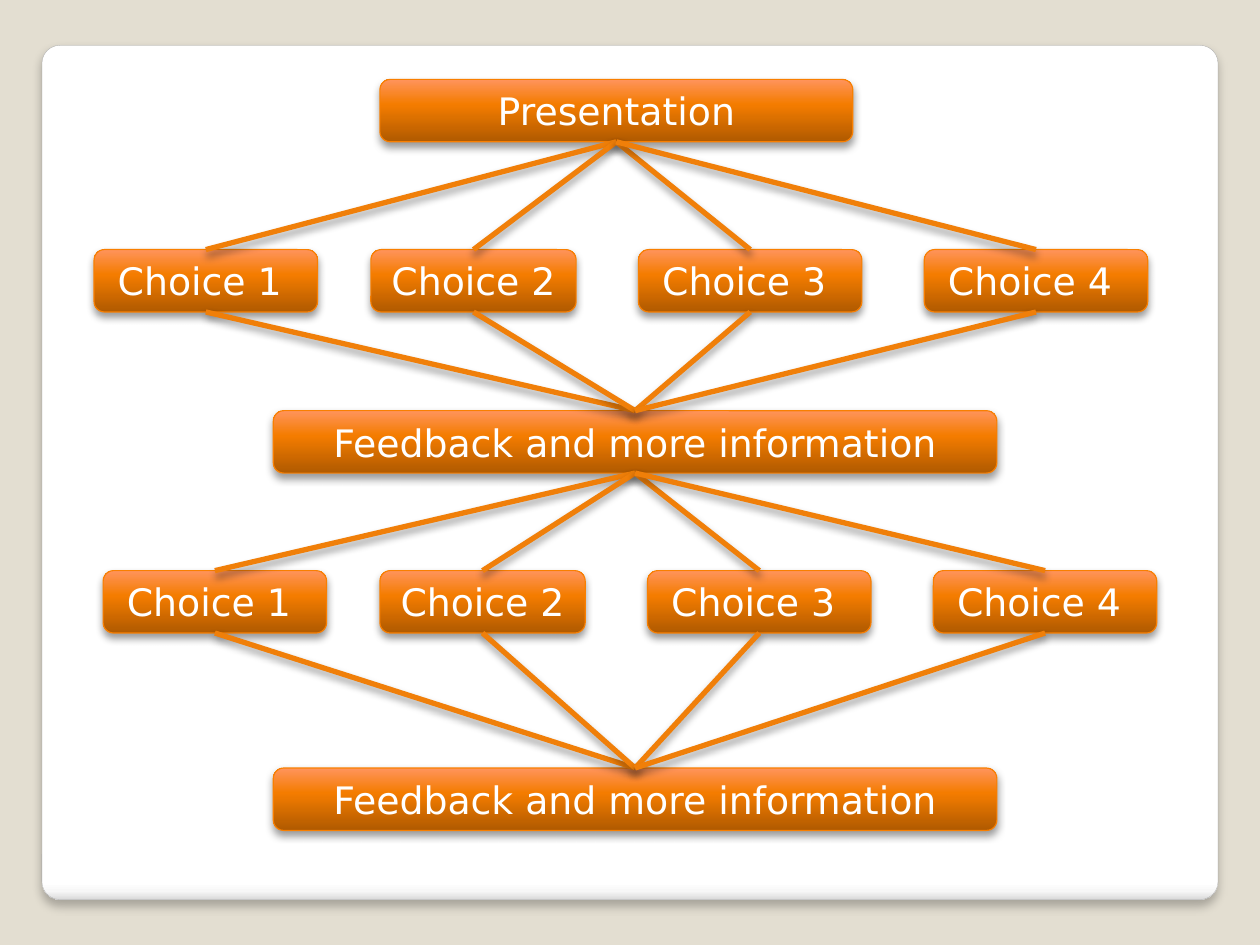
from lxml import etree
from pptx import Presentation
from pptx import util as u
from pptx.dml.color import RGBColor
from pptx.enum import shapes, text
from pptx.oxml.ns import qn

# Content: rows of boxes from top to bottom, each box as (label, left, width)
FEEDBACK = [("Feedback and more information", 2.41, 6.38)]
CHOICES = [("Choice 1 ", 0.83, 1.97), ("Choice 2", 3.27, 1.81),
           ("Choice 3 ", 5.63, 1.97), ("Choice 4 ", 8.15, 1.97)]
SECOND_ROW_SHIFT = 0.08
ROWS = [
    (0.7, [("Presentation", 3.35, 4.17)]),
    (2.2, CHOICES),
    (3.62, FEEDBACK),
    (5.03, [(label, left + SECOND_ROW_SHIFT, width) for label, left, width in CHOICES]),
    (6.77, FEEDBACK),
]
BOX_HEIGHT = 0.55

# Style: gradient stops as (percent, colour), shadows as (opacity, blur, distance)
FONT = "DejaVu Sans"
PANEL_STOPS = [(0, "FFFFFF"), (98, "FFFFFF"), (99, "F7F7F7"), (100, "DADADA")]
BOX_STOPS = [(0, "B05A00"), (60, "F47C00"), (100, "FF945C")]
PANEL_SHADOW = (25, 6, 4)
BOX_SHADOW = (40, 5.2, 3)
TOP, BOTTOM = 0, 2


def color(value):
    return RGBColor.from_string(value)


def add_color(parent, value):
    return etree.SubElement(parent, qn("a:srgbClr"), val=value)


def set_line(line, value, width):
    line.color.rgb = color(value)
    line.width = u.Pt(width)


def set_gradient(shape, stops, angle):
    shape.fill.gradient()
    shape.fill.gradient_angle = angle
    stop_list = shape._element.spPr.find(".//" + qn("a:gsLst"))
    for old_stop in list(stop_list):
        stop_list.remove(old_stop)
    for percent, value in stops:
        stop = etree.SubElement(stop_list, qn("a:gs"), pos=str(percent * 1000))
        add_color(stop, value)


def set_shadow(item, opacity, blur, distance):
    effects = etree.SubElement(item._element.spPr, qn("a:effectLst"))
    shadow = etree.SubElement(effects, qn("a:outerShdw"), blurRad=str(u.Pt(blur)),
                              dist=str(u.Pt(distance)), dir="5400000",
                              algn="t", rotWithShape="0")
    etree.SubElement(add_color(shadow, "000000"), qn("a:alpha"), val=str(opacity * 1000))


def add_panel(slide, left, top, width, height):
    shape = slide.shapes.add_shape(
        shapes.MSO_SHAPE.ROUNDED_RECTANGLE,
        u.Inches(left), u.Inches(top), u.Inches(width), u.Inches(height))
    return shape


def add_box(slide, label, left, top, width):
    box = add_panel(slide, left, top, width, BOX_HEIGHT)
    set_gradient(box, BOX_STOPS, 90)
    set_line(box.line, "F97F00", 0.75)
    set_shadow(box, *BOX_SHADOW)
    frame = box.text_frame
    frame.vertical_anchor = text.MSO_ANCHOR.MIDDLE
    paragraph = frame.paragraphs[0]
    paragraph.alignment = text.PP_ALIGN.CENTER
    run = paragraph.add_run()
    run.text = label
    run.font.name = FONT
    run.font.size = u.Pt(24)
    run.font.color.rgb = color("FFFFFF")
    return box


def join(slide, upper, lower):
    connector = slide.shapes.add_connector(shapes.MSO_CONNECTOR.STRAIGHT, 0, 0, 0, 0)
    connector.begin_connect(upper, BOTTOM)
    connector.end_connect(lower, TOP)
    set_line(connector.line, "F07F09", 3.35)
    set_shadow(connector, *BOX_SHADOW)


def main():
    presentation = Presentation()
    presentation.slide_width = u.Inches(11.11)
    presentation.slide_height = u.Inches(8.33)
    slide = presentation.slides.add_slide(presentation.slide_layouts[6])
    slide.background.fill.solid()
    slide.background.fill.fore_color.rgb = color("E3DED1")

    # White panel
    panel = add_panel(slide, 0.37, 0.4, 10.37, 7.53)
    panel.adjustments[0] = 0.021
    set_gradient(panel, PANEL_STOPS, 270)
    set_line(panel.line, "A4A4A4", 0.16)
    set_shadow(panel, *PANEL_SHADOW)

    # Boxes
    box_rows = [[add_box(slide, label, left, top, width) for label, left, width in row]
                for top, row in ROWS]

    # Lines from every box to every box in the next row
    for upper_row, lower_row in zip(box_rows, box_rows[1:]):
        for upper in upper_row:
            for lower in lower_row:
                join(slide, upper, lower)

    presentation.save("out.pptx")


if __name__ == "__main__":
    main()
